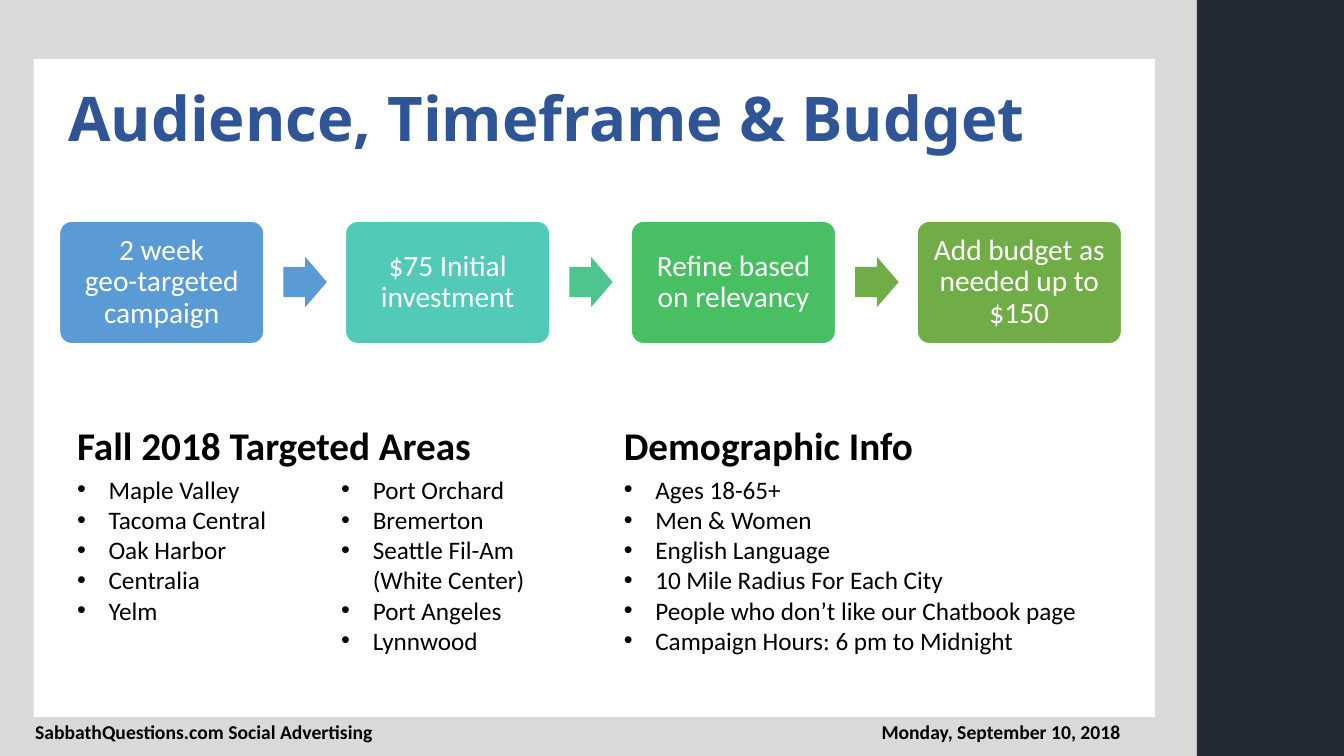
from lxml import etree
from pptx import Presentation
from pptx import util as u
from pptx.dml.color import RGBColor
from pptx.enum import shapes, text
from pptx.oxml.ns import qn


def colour(value):
    return RGBColor.from_string(value)


class SlideBuilder:
    body_font = "Calibri"
    title_font = "Noto Sans"
    black = "000000"
    white = "FFFFFF"

    def __init__(self, deck):
        self.slide = deck.slides.add_slide(deck.slide_layouts[5])

    def format(self, para, size, value, bold=False, font=None):
        for span in para.runs:
            span.font.name = font or self.body_font
            span.font.size = u.Pt(size)
            span.font.bold = bold
            span.font.color.rgb = colour(value)

    def shape(self, kind, place, fill, adjustments=(), line=None):
        shape = self.slide.shapes.add_shape(kind, *map(u.Pt, place))
        shape.shadow.inherit = False
        shape.fill.solid()
        shape.fill.fore_color.rgb = colour(fill)
        if line:
            shape.line.color.rgb = colour(line)
            shape.line.width = u.Pt(1)
        else:
            shape.line.fill.background()
        for index, value in enumerate(adjustments):
            shape.adjustments[index] = value
        return shape

    def panel(self, place, fill):
        self.shape(shapes.MSO_SHAPE.RECTANGLE, place, fill)

    def title(self, words, place):
        title = self.slide.shapes.title
        self.slide.shapes.element.append(title.element)
        title.left, title.top, title.width, title.height = map(u.Pt, place)
        frame = title.text_frame
        frame.text = words
        frame.auto_size = text.MSO_AUTO_SIZE.NONE
        frame.vertical_anchor = text.MSO_ANCHOR.MIDDLE
        para = frame.paragraphs[0]
        para.alignment = text.PP_ALIGN.LEFT
        para.line_spacing = 0.9
        self.format(para, 44, "2F5597", True, self.title_font)

    def step(self, words, place, fill):
        box = self.shape(shapes.MSO_SHAPE.ROUNDED_RECTANGLE, place, fill, [0.1], self.white)
        frame = box.text_frame
        frame.text = words
        frame.word_wrap = True
        frame.vertical_anchor = text.MSO_ANCHOR.MIDDLE
        frame.margin_left = frame.margin_right = u.Pt(6.5)
        frame.margin_top = frame.margin_bottom = u.Pt(6.5)
        para = frame.paragraphs[0]
        para.alignment = text.PP_ALIGN.CENTER
        para.line_spacing = 0.9
        self.format(para, 21, self.white)

    def arrow(self, place, fill):
        self.shape(shapes.MSO_SHAPE.RIGHT_ARROW, place, fill, [0.6, 0.5])

    def text_box(self, words, place, size, bold=False, align=text.PP_ALIGN.LEFT):
        box = self.slide.shapes.add_textbox(*map(u.Pt, place))
        frame = box.text_frame
        frame.word_wrap = True
        frame.text = words
        for para in frame.paragraphs:
            para.alignment = align
            self.format(para, size, self.black, bold)
        return box

    def bullets(self, items, place):
        box = self.text_box("\n".join(items), place, 18)
        for para in box.text_frame.paragraphs:
            properties = para._p.get_or_add_pPr()
            properties.set("marL", str(u.Pt(22.5)))
            properties.set("indent", str(-u.Pt(22.5)))
            etree.SubElement(properties, qn("a:buFont")).set("typeface", "Arial")
            etree.SubElement(properties, qn("a:buChar")).set("char", "•")


def main():
    deck = Presentation()
    deck.slide_width, deck.slide_height = u.Pt(960), u.Pt(540)
    builder = SlideBuilder(deck)

    builder.panel((0, 0, 855, 540), "D9D9D9")
    builder.panel((24, 42, 801, 470), "FFFFFF")
    builder.panel((855, 0, 105, 540), "222A35")
    builder.title("Audience, Timeframe & Budget", (41.5, 41.5, 759, 91))

    steps = [
        ("2 week\vgeo-targeted campaign", "5B9BD5"),
        ("$75 Initial investment", "52CAB8"),
        ("Refine based on relevancy", "49BF64"),
        ("Add budget as needed up to $150", "70AD47"),
    ]
    pitch = 204.2
    for index, (words, fill) in enumerate(steps):
        builder.step(words, (42.5 + index * pitch, 158, 146, 87.5), fill)
    for index, fill in enumerate(["5B9BD5", "4DC58D", "70AD47"]):
        builder.arrow((202.5 + index * pitch, 183.5, 31, 36), fill)

    areas_left, demographics_left = 48, 438.5
    heading_top, list_top, list_height = 297.5, 335, 138
    for words, left in [
        ("Fall 2018 Targeted Areas", areas_left),
        ("Demographic Info", demographics_left),
    ]:
        builder.text_box(words, (left, heading_top, 318, 41), 28, True)

    lists = [
        (areas_left, 169,
         ["Maple Valley", "Tacoma Central", "Oak Harbor", "Centralia", "Yelm"]),
        (236.7, 168.5,
         ["Port Orchard", "Bremerton", "Seattle Fil-Am (White Center)",
          "Port Angeles", "Lynnwood"]),
        (demographics_left, 343.5,
         ["Ages 18-65+", "Men & Women", "English Language",
          "10 Mile Radius For Each City",
          "People who don’t like our Chatbook page",
          "Campaign Hours: 6 pm to Midnight"]),
    ]
    for left, width, items in lists:
        builder.bullets(items, (left, list_top, width, list_height))

    for words, left, align in [
        ("SabbathQuestions.com Social Advertising", 18, text.PP_ALIGN.LEFT),
        ("Monday, September 10, 2018", 432, text.PP_ALIGN.RIGHT),
    ]:
        builder.text_box(words, (left, 511, 375.5, 24.5), 14, True, align)

    deck.save("out.pptx")


if __name__ == "__main__":
    main()
